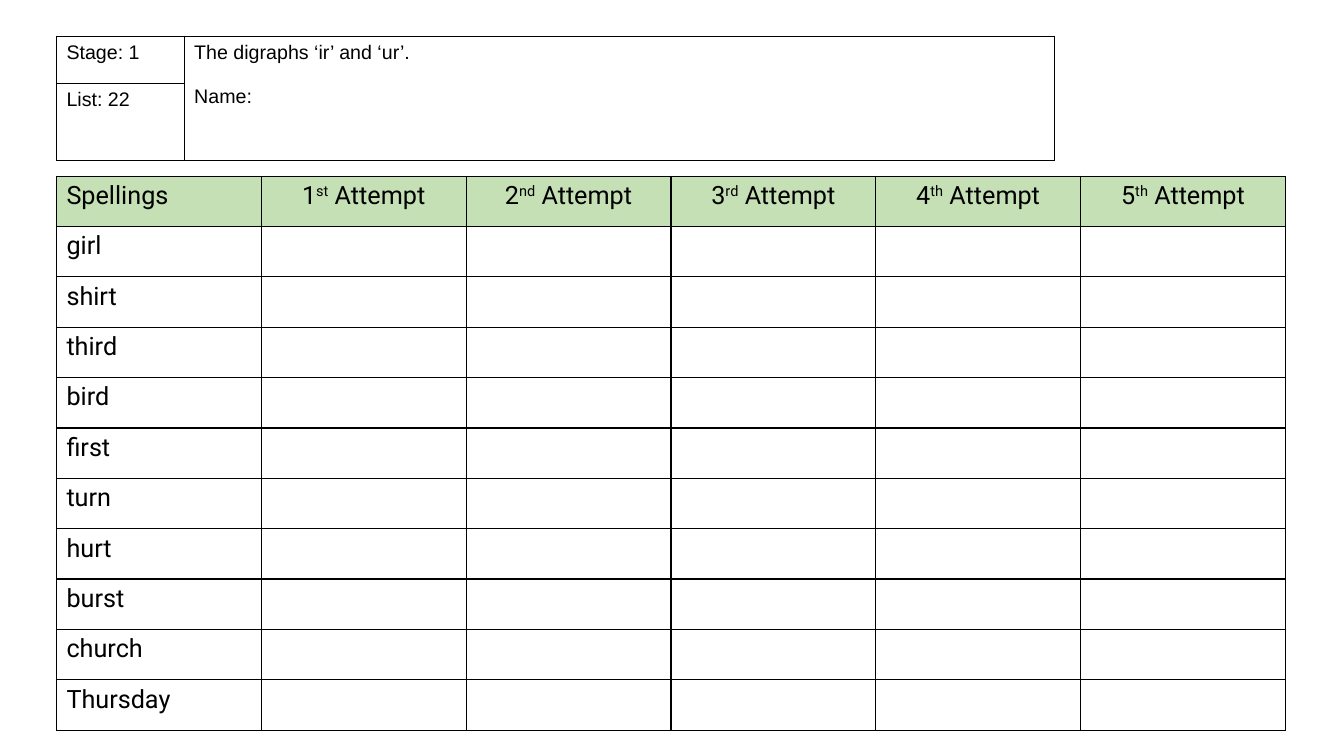
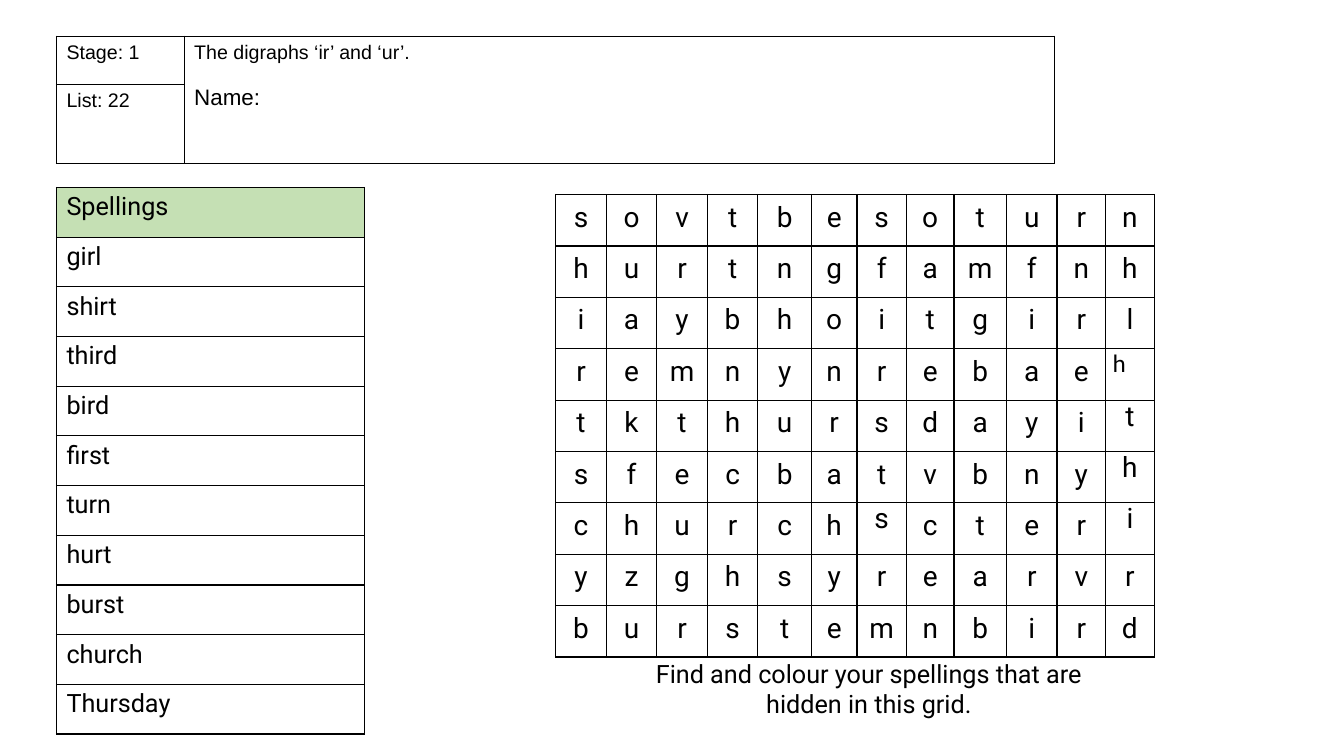
from dataclasses import dataclass

from lxml import etree
from pptx import Presentation
from pptx import util as u
from pptx.dml.color import RGBColor
from pptx.enum import text
from pptx.oxml import ns


@dataclass(frozen=True)
class Theme:
    ink: str = "000000"
    head_fill: str = "C5E0B4"
    body_font: str = "Roboto"
    label_font: str = "Arial"
    odd_font: str = "Calibri"
    label_pt: int = 14
    name_pt: int = 16
    body_pt: int = 18
    letter_pt: int = 20
    border_pt: int = 1


T = Theme()
SLIDE_W, SLIDE_H = u.Inches(13.33), u.Inches(7.5)
LEFT = 4.2  # shared left edge, percent of slide width
CENTER = text.PP_ALIGN.CENTER

WORDS = ["girl", "shirt", "third", "bird", "first",
         "turn", "hurt", "burst", "church", "Thursday"]
ORDINALS = ["st", "nd", "rd", "th", "th"]
LETTERS = ["sovtbesoturn", "hurtngfamfnh", "iaybhoitgirl",
           "remnynrebaeh", "tkthursdayit", "sfecbatvbnyh",
           "churchscteri", "yzghsyrearvr", "burstemnbird"]
LETTER_COLS = [50, 50, 50, 50, 53, 45, 49, 47, 52, 50, 48, 48]
# Letters (row, column) set in single line spacing
SINGLE_SPACED = {(4, 11), (5, 11), (6, 6), (6, 11)}
ODD_LETTER = (3, 11)


def place(left, top, width, height):
    """Turn percentages of the slide into lengths."""
    return (u.Emu(round(SLIDE_W * left / 100)), u.Emu(round(SLIDE_H * top / 100)),
            u.Emu(round(SLIDE_W * width / 100)), u.Emu(round(SLIDE_H * height / 100)))


def style(p, font=T.body_font, size=T.body_pt, align=None):
    p.alignment = align
    for r in p.runs:
        r.font.name, r.font.size = font, u.Pt(size)
        r.font.color.rgb = RGBColor.from_string(T.ink)


def write(cell, words, **look):
    cell.text_frame.text = words
    for p in cell.text_frame.paragraphs:
        style(p, **look)


def outline(cell):
    tcPr = cell._tc.get_or_add_tcPr()
    for side in ("a:lnL", "a:lnR", "a:lnT", "a:lnB"):
        ln = etree.SubElement(tcPr, ns.qn(side), w=str(u.Pt(T.border_pt)))
        fill = etree.SubElement(ln, ns.qn("a:solidFill"))
        etree.SubElement(fill, ns.qn("a:srgbClr"), val=T.ink)


def ruled_table(s, box, cols, rows):
    """Plain bordered table; cols and rows are relative shares of the box."""
    left, top, width, height = place(*box)
    table = s.shapes.add_table(len(rows), len(cols), left, top, width, height).table
    table.first_row = table.horz_banding = False
    for column, share in zip(table.columns, cols):
        column.width = u.Emu(round(width * share / sum(cols)))
    for row, share in zip(table.rows, rows):
        row.height = u.Emu(round(height * share / sum(rows)))
    for cell in table.iter_cells():
        outline(cell)
        cell.fill.background()
    return table


def header(s, height, name_pt):
    """Stage, list number, topic and name."""
    table = ruled_table(s, (LEFT, 4.8, 74.25, height), [12.8, 87.2], [38, 62])
    topic = table.cell(0, 1)
    topic.merge(table.cell(1, 1))
    label = dict(font=T.label_font, size=T.label_pt)
    write(table.cell(0, 0), "Stage: 1", **label)
    write(table.cell(1, 0), "List: 22", **label)
    write(topic, "The digraphs ‘ir’ and ‘ur’.\nName:", **label)
    name = topic.text_frame.paragraphs[1]
    name.space_before = u.Pt(16)
    style(name, font=T.label_font, size=name_pt)


def spelling_table(s, box, attempts=0):
    """Spelling words, with empty columns for the attempts."""
    table = ruled_table(s, box, [1] * (attempts + 1), [1] * (len(WORDS) + 1))
    for i, word in enumerate(["Spellings"] + WORDS):
        write(table.cell(i, 0), word)
    for n in range(1, attempts + 1):
        p = table.cell(0, n).text_frame.paragraphs[0]
        for part in (str(n), ORDINALS[n - 1], " Attempt"):
            p.add_run().text = part
        style(p, align=CENTER)
        p.runs[1]._r.get_or_add_rPr().set("baseline", "30000")
    for cell in table.rows[0].cells:
        cell.fill.solid()
        cell.fill.fore_color.rgb = RGBColor.from_string(T.head_fill)


def letter_grid(s, box):
    """Word search."""
    table = ruled_table(s, box, LETTER_COLS, [1] * len(LETTERS))
    for i, line in enumerate(LETTERS):
        for j, letter in enumerate(line):
            cell = table.cell(i, j)
            cell.margin_left = cell.margin_right = u.Inches(0.07)
            cell.margin_top = cell.margin_bottom = 0
            if (i, j) == ODD_LETTER:
                write(cell, letter, font=T.odd_font)
                continue
            write(cell, letter, size=T.letter_pt, align=CENTER)
            if (i, j) not in SINGLE_SPACED:
                p = cell.text_frame.paragraphs[0]
                p.line_spacing, p.space_after = 1.2, u.Pt(10)


def caption(s, box, words):
    tf = s.shapes.add_textbox(*place(*box)).text_frame
    tf.word_wrap = True
    tf.text = words
    style(tf.paragraphs[0], align=CENTER)


def attempts_slide(s):
    spelling_table(s, (LEFT, 23.3, 91.45, 73.3), attempts=5)
    header(s, 16.4, T.label_pt)


def word_search_slide(s):
    spelling_table(s, (LEFT, 24.8, 22.9, 72.3))
    header(s, 16.7, T.name_pt)
    letter_grid(s, (41.35, 25.73, 44.55, 61.2))
    caption(s, (46, 86.4, 37.3, 9.5),
            "Find and colour your spellings that are hidden in this grid.")


def main():
    prs = Presentation()
    prs.slide_width, prs.slide_height = SLIDE_W, SLIDE_H
    for build in (attempts_slide, word_search_slide):
        build(prs.slides.add_slide(prs.slide_layouts[6]))
    prs.save("out.pptx")


if __name__ == "__main__":
    main()
